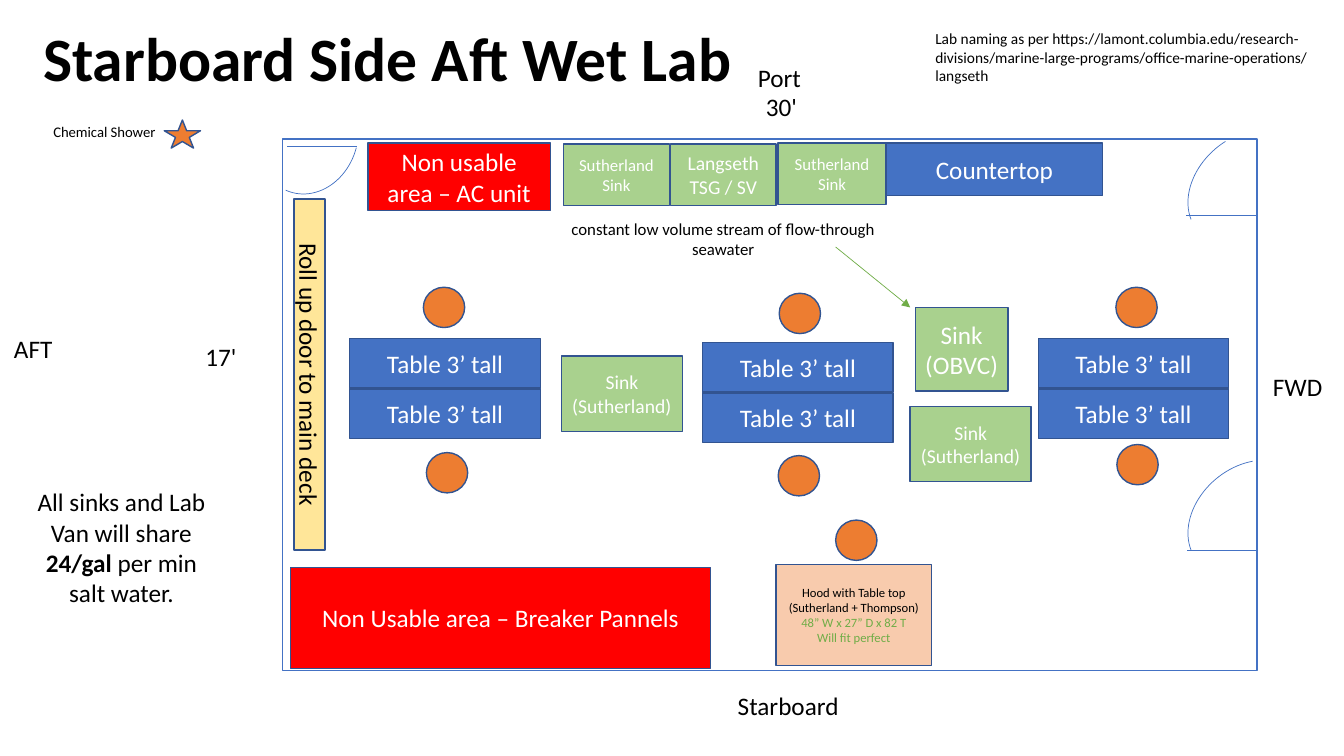
from lxml.etree import SubElement as Sub
from pptx import Presentation
from pptx.dml.color import RGBColor as Rgb
from pptx.enum.shapes import MSO_CONNECTOR as Conn, MSO_SHAPE as Form
from pptx.enum.text import MSO_ANCHOR as Anchor, MSO_AUTO_SIZE as Auto, PP_ALIGN as Align
from pptx.oxml.ns import qn
from pptx.util import Inches, Pt

HUES = {
    "black": "000000", "white": "FFFFFF", "blue": "4472C4", "navy": "325491",
    "green": "A9D18E", "leaf": "70AD47", "red": "FF0000", "cream": "FFE699",
    "peach": "F8CBAD", "orange": "ED7D31",
}
CELL = 0.1
COLS, ROWS = 133.33, 75
FACE = "Calibri"

TITLE = "Starboard Side Aft Wet Lab"
SOURCE = ("Lab naming as per https://lamont.columbia.edu/research-divisions/"
          "marine-large-programs/office-marine-operations/langseth")
WATER = [("All sinks and Lab Van will share ", {}), ("24/gal ", {"bold": True}),
         ("per min salt water.", {})]
HOOD = [[("Hood with Table top (Sutherland + Thompson)", {})],
        [("48” W x 27” D x 82 T", {"hue": "leaf"})],
        [("Will fit perfect", {"hue": "leaf"})]]

LABELS = [
    ("30'", (75, 8.6, 5.2, 4), 18, True, Align.LEFT),
    ("17'", (19.4, 33.4, 5.7, 4), 18, True, Align.LEFT),
    ("Starboard", (72.2, 68, 12.1, 4), 18, False, Align.LEFT),
    ("Port", (74.2, 5.7, 6.4, 4), 18, False, Align.LEFT),
    ("FWD", (125.3, 36.3, 7, 4), 18, False, Align.LEFT),
    ("AFT", (0.4, 32.6, 5.9, 4), 18, False, Align.LEFT),
    (SOURCE, (91.8, 2.4, 39.8, 6.6), 11, True, Align.LEFT),
    ("constant low volume stream of flow-through seawater",
     (55.6, 21.2, 32.3, 5), 12, True, Align.CENTER),
    ("Chemical Shower", (4.3, 11.7, 13.2, 2.8), 10.5, True, Align.LEFT),
    ([WATER], (2.4, 47.8, 19.3, 13.1), 18, True, Align.CENTER),
]
ROOM = (28, 13.8, 96.7, 52.7)
ARCS = [
    ((24.6, 8.4, 11.8, 10), 104.5, (162, 4.27)),
    ((118.8, 12, 10.1, 13.2), 229.7, (168.73, 8.27)),
    ((118.8, 44.8, 10.1, 13.2), 229.7, (168.73, 26.7)),
]
SILLS = [(28.5, 14.5), (117.7, 21.4), (117.8, 54.6)]
SILL = 6.9
BENCHES = [(34.7, 33.6), (69.7, 34), (103, 33.6)]
TABLE = (18.9, 4.9)
PITCH = 5
BOXES = [
    (HOOD, (77, 56, 15.4, 10), "peach", 9, "black", 0),
    ("Sink (OBVC)", (90.8, 30.5, 9.2, 8.3), "green", 18, "white", 0),
    ("Sutherland Sink", (77.2, 14.2, 10.7, 6.1), "green", 12, "white", 0),
    ("Countertop", (87.9, 14.2, 21.5, 5.2), "blue", 18, "white", 0),
    ("Langseth TSG / SV", (66.5, 14.3, 10.5, 6.1), "green", 14, "white", 0),
    ("Sutherland Sink", (55.9, 14.3, 10.5, 6.1), "green", 12, "white", 0),
    ("Roll up door to main deck", (13.3, 35.6, 34.8, 3.1), "cream", 18, "black", 90),
    ("Non Usable area – Breaker Pannels", (28.8, 56.3, 41.7, 10), "red", 18, "white", 0),
    ("Sink (Sutherland)", (90.3, 40.3, 12, 7.5), "green", 14, "white", 0),
    ("Sink (Sutherland)", (55.7, 35.3, 12, 7.5), "green", 14, "white", 0),
    ("Non usable area – AC unit", (36.5, 14.2, 18.1, 6.7), "red", 18, "white", 0),
]
STOOLS = [(42.3, 44.9), (42, 28.5), (77.2, 45.2), (77.3, 29.1),
          (110.7, 28.5), (110.8, 44.1), (82.9, 51.6)]
STAR = (16.3, 11.9, 3.6, 2.8)
FLOW = (82.9, 24.5, 90.3, 30.5)


def span(nums):
    return [Inches(n * CELL) for n in nums]


def tint(name):
    return Rgb.from_string(HUES[name])


def apply(item, look):
    for key, val in look.items():
        setattr(item, key, val)


def write(frame, text, size, hue="black", align=Align.LEFT, bold=False, look=None):
    apply(frame, {"word_wrap": True, **(look or {})})
    paras = [[(text, {})]] if isinstance(text, str) else text
    for i, runs in enumerate(paras):
        para = frame.add_paragraph() if i else frame.paragraphs[0]
        para.alignment = align
        for words, mark in runs:
            run = para.add_run()
            run.text = words
            apply(run.font, {"name": FACE, "size": Pt(size),
                             "bold": mark.get("bold", bold)})
            run.font.color.rgb = tint(mark.get("hue", hue))


def draw(form, place, fill=None, edge="navy", width=1, turn=0):
    shape = deck.add_shape(form, *span(place))
    shape.shadow.inherit = False
    shape.rotation = turn
    if fill:
        shape.fill.solid()
        shape.fill.fore_color.rgb = tint(fill)
    else:
        shape.fill.background()
    shape.line.color.rgb = tint(edge)
    shape.line.width = Pt(width)
    return shape


def rule(ends, hue, arrow=False):
    line = deck.add_connector(Conn.STRAIGHT, *span(ends))
    line.line.color.rgb = tint(hue)
    line.line.width = Pt(0.5)
    if arrow:
        Sub(line.line._get_or_add_ln(), qn("a:tailEnd"), type="triangle")
    Sub(line._element.spPr, qn("a:effectLst"))


def label(text, place, size, wrap, align):
    box = deck.add_textbox(*span(place))
    write(box.text_frame, text, size, align=align,
          look={"word_wrap": wrap, "auto_size": Auto.SHAPE_TO_FIT_TEXT})


def block(text, place, fill, size, hue, turn):
    shape = draw(Form.RECTANGLE, place, fill, turn=turn)
    write(shape.text_frame, text, size, hue, Align.CENTER,
          look={"vertical_anchor": Anchor.MIDDLE})


show = Presentation()
show.slide_width, show.slide_height = span((COLS, ROWS))
deck = show.slides.add_slide(show.slide_layouts[6]).shapes

head = deck.add_textbox(*span((3.3, -1.1, 115, 14.5))).text_frame
write(head, TITLE, 44, bold=True, look={"vertical_anchor": Anchor.MIDDLE})
head.paragraphs[0].line_spacing = 0.9

for place, turn, bends in ARCS:
    arc = draw(Form.ARC, place, edge="blue", width=0.5, turn=turn)
    for i, bend in enumerate(bends):
        arc.adjustments[i] = bend
draw(Form.RECTANGLE, ROOM, edge="blue")
for x, y in BENCHES:
    for row in range(2):
        block("Table 3’ tall", (x, y + row * PITCH, *TABLE), "blue", 18, "white", 0)
for box in BOXES:
    block(*box)
for x, y in SILLS:
    rule((x, y, x + SILL, y), "blue")
for x, y in STOOLS:
    draw(Form.OVAL, (x, y, 4.1, 4), "orange")
draw(Form.STAR_5_POINT, STAR, "orange")
for item in LABELS:
    label(*item)
rule(FLOW, "leaf", True)

show.save("out.pptx")
